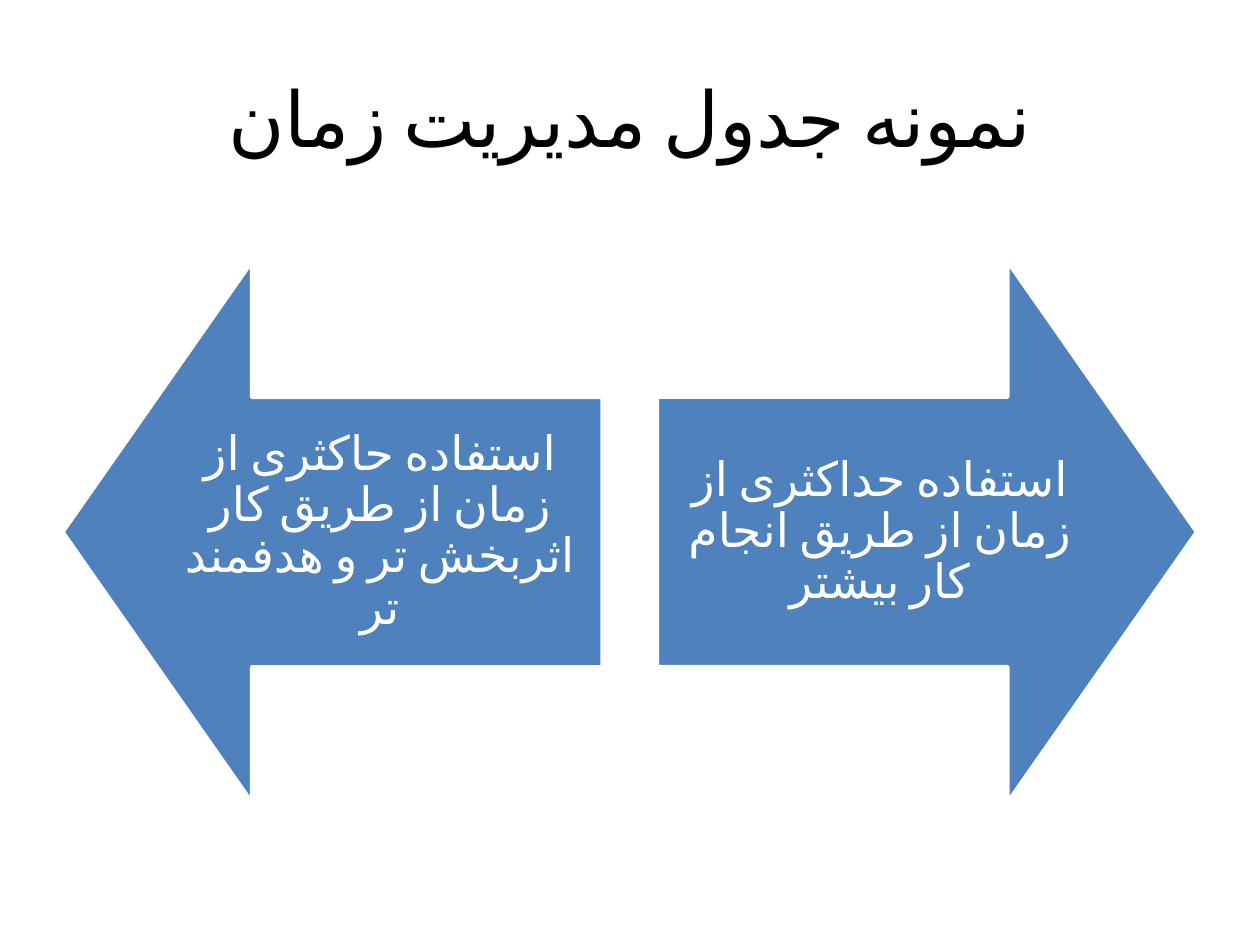
"""Build a slide with a title and two opposing arrows about time management."""
from lxml import etree
from pptx import Presentation
from pptx import util as u
from pptx.dml.color import RGBColor
from pptx.enum import lang, shapes, text
from pptx.oxml import ns

COLOURS = {"title": "000000", "arrow": "4F81BD", "light": "FFFFFF"}
FONT = "Calibri"
ARROW_SIZE = 10.87
ARROW_TOP = 5.29
LABEL_WIDTH = 8.97
LABEL_HEIGHT = ARROW_SIZE / 2
LABEL_INSET = 0.53


def add_text(page, left, top, width, height, words, size, colour):
    box = page.shapes.add_textbox(u.Cm(left), u.Cm(top), u.Cm(width), u.Cm(height))
    frame = box.text_frame
    frame.word_wrap = True
    frame.vertical_anchor = text.MSO_ANCHOR.MIDDLE
    para = frame.paragraphs[0]
    para.alignment = text.PP_ALIGN.CENTER
    span = para.add_run()
    span.text = words
    span.font.name = FONT
    span.font.size = u.Pt(size)
    span.font.color.rgb = RGBColor.from_string(COLOURS[colour])
    span.font.language_id = lang.MSO_LANGUAGE_ID.FARSI
    etree.SubElement(span.font._element, ns.qn("a:cs"), typeface=FONT)
    return frame


deck = Presentation()
deck.slide_width = u.Cm(25.4)
deck.slide_height = u.Cm(19.05)
page = deck.slides.add_slide(deck.slide_layouts[6])

add_text(page, 1.27, 0.76, 22.86, 3.18, "نمونه جدول مدیریت زمان", 44, "title")

arrows = [
    (1.27, 270, 1.27 + ARROW_SIZE - LABEL_WIDTH,
     "استفاده حاکثری از زمان از طریق کار اثربخش تر و هدفمند تر"),
    (13.25, 90, 13.25, "استفاده حداکثری از زمان از طریق انجام کار بیشتر"),
]
for arrow_left, rotation, label_left, words in arrows:
    arrow = page.shapes.add_shape(
        shapes.MSO_SHAPE.UP_ARROW,
        u.Cm(arrow_left), u.Cm(ARROW_TOP), u.Cm(ARROW_SIZE), u.Cm(ARROW_SIZE))
    arrow.rotation = rotation
    arrow.adjustments[0] = 0.5
    arrow.adjustments[1] = 0.35
    arrow.shadow.inherit = False
    arrow.fill.solid()
    arrow.fill.fore_color.rgb = RGBColor.from_string(COLOURS["arrow"])
    arrow.line.color.rgb = RGBColor.from_string(COLOURS["light"])
    arrow.line.width = u.Pt(2)

    label_top = ARROW_TOP + (ARROW_SIZE - LABEL_HEIGHT) / 2
    frame = add_text(page, label_left, label_top, LABEL_WIDTH, LABEL_HEIGHT,
                     words, 27, "light")
    frame.margin_left = frame.margin_right = u.Cm(LABEL_INSET)
    frame.margin_top = frame.margin_bottom = u.Cm(LABEL_INSET)
    para = frame.paragraphs[0]
    para.line_spacing = 0.9
    para._p.get_or_add_pPr().set("rtl", "1")

deck.save("out.pptx")
